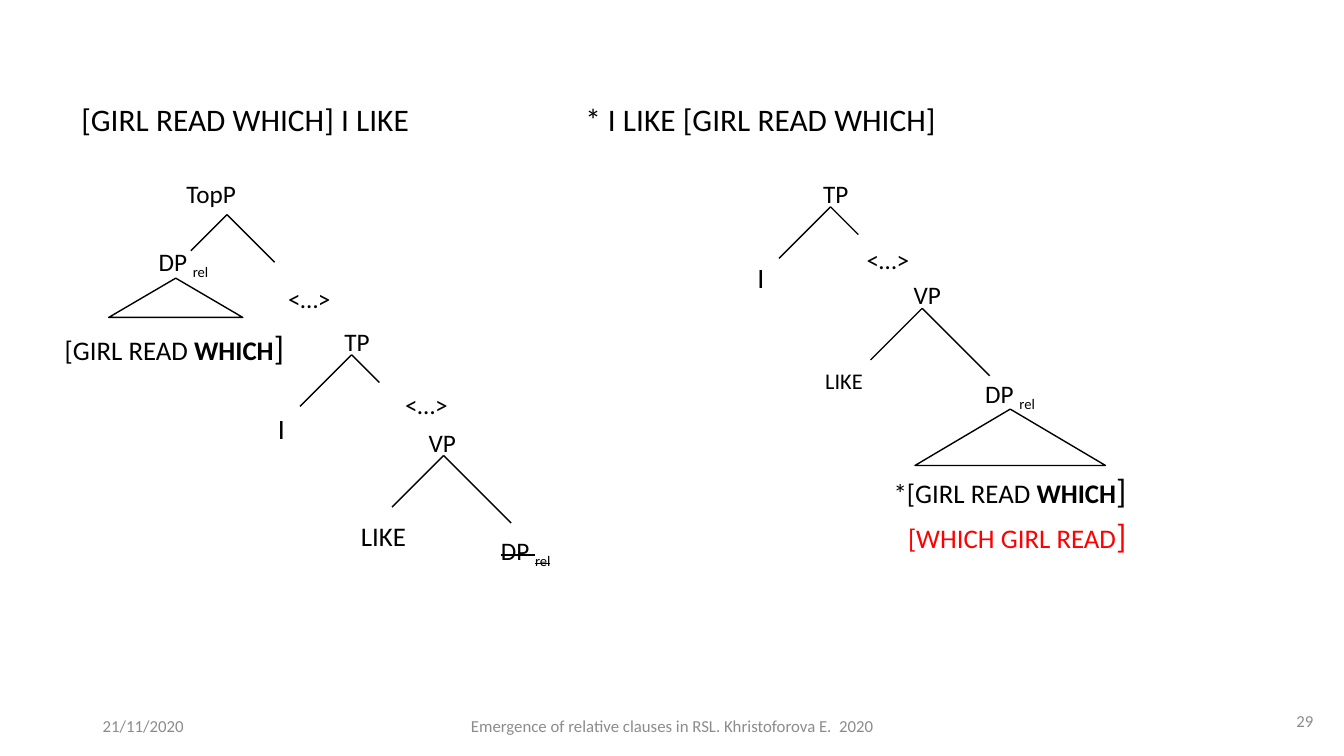
from dataclasses import dataclass

from lxml import etree
from pptx import Presentation
from pptx.dml.color import RGBColor
from pptx.enum import shapes, text
from pptx.oxml import ns
from pptx.util import Cm, Pt

LEFT, MID, RIGHT = text.PP_ALIGN.LEFT, text.PP_ALIGN.CENTER, text.PP_ALIGN.RIGHT


@dataclass(frozen=True)
class Theme:
    font: str = "Calibri"
    ink: RGBColor = RGBColor(0, 0, 0)
    paper: RGBColor = RGBColor(255, 255, 255)
    red: RGBColor = RGBColor(255, 0, 0)
    grey: RGBColor = RGBColor(0x8C, 0x8C, 0x8C)
    line: float = 1
    foot: int = 12
    node: int = 18
    word: int = 20
    phrase: int = 24
    head: int = 28


T = Theme()


@dataclass(frozen=True)
class Bit:
    text: str
    small: bool = False
    bold: bool = False
    sub: bool = False
    strike: bool = False


@dataclass(frozen=True)
class Label:
    x: float
    y: float
    w: float
    bits: tuple[Bit, ...]
    size: int = T.node
    color: RGBColor = T.ink
    align: text.PP_ALIGN = MID


@dataclass(frozen=True)
class Fork:
    x: float
    y: float
    left: float
    right: float


@dataclass(frozen=True)
class Roof:
    x: float
    y: float
    w: float
    h: float


def plain(word: str) -> tuple[Bit, ...]:
    return (Bit(word),)


def caps(word: str) -> tuple[Bit, ...]:
    return (Bit(word, small=True),)


def rel(strike: bool = False) -> tuple[Bit, ...]:
    return Bit("DP ", strike=strike), Bit("rel", sub=True, strike=strike)


def clause(start: str) -> tuple[Bit, ...]:
    return Bit(start, small=True), Bit("which", small=True, bold=True), Bit("]")


HEAD = Label(1.8, 2.34, 30.86, caps("[girl read which] i like\t* i like [girl read which]"),
             T.head, align=LEFT)
FORKS = [
    Fork(5.72, 5.41, 0.91, 1.2),
    Fork(8.86, 8.94, 1.3, 0.7),
    Fork(11.18, 11.48, 1.3, 1.7),
    Fork(20.93, 5.21, 1.3, 0.7),
    Fork(23.24, 7.77, 1.3, 1.7),
]
ROOFS = [Roof(2.74, 7.01, 3.38, 0.99), Roof(23.06, 10.31, 4.8, 1.42)]
LABELS = [
    Label(4.19, 4.37, 2.26, plain("TopP")),
    Label(3.38, 6.12, 2.49, rel()),
    Label(1.04, 8.1, 6.71, clause("[girl read "), T.phrase),
    Label(7.01, 7.01, 2.26, plain("<…>"), align=LEFT),
    Label(8.26, 8.08, 1.47, plain("TP")),
    Label(6.27, 10.24, 1.47, caps("I"), T.word),
    Label(9.96, 9.68, 2.26, plain("<…>"), align=LEFT),
    Label(10.41, 10.64, 1.47, plain("VP")),
    Label(8.79, 12.8, 1.75, caps("like"), T.phrase),
    Label(12.07, 13.41, 2.36, rel(strike=True)),
    Label(20.35, 4.37, 1.42, plain("TP")),
    Label(18.06, 6.43, 2.06, caps("I"), T.word),
    Label(21.59, 6.02, 2.26, plain("<…>"), align=LEFT),
    Label(22.66, 6.91, 1.42, plain("VP")),
    Label(20.24, 8.97, 2.06, caps("like"), T.word),
    Label(24.31, 9.45, 2.29, rel()),
    Label(22.1, 11.71, 6.71, clause("*[girl read "), T.phrase),
    Label(22.28, 12.85, 6.71, caps("[which girl read") + plain("]"), T.phrase, T.red),
    Label(2.34, 17.78, 7.62, plain("21/11/2020"), T.foot, T.grey, LEFT),
    Label(11.23, 17.78, 11.43,
          plain("Emergence of relative clauses in RSL. Khristoforova E.  2020"), T.foot, T.grey),
    Label(25.73, 17.65, 7.62, plain("29"), T.foot, T.grey, RIGHT),
]


def write(slide, label: Label):
    high = 0.25 + 0.043 * max(label.size, T.node)
    box = slide.shapes.add_textbox(Cm(label.x), Cm(label.y), Cm(label.w), Cm(high))
    frame = box.text_frame
    frame.word_wrap = True
    frame.vertical_anchor = text.MSO_ANCHOR.MIDDLE
    para = frame.paragraphs[0]
    para.alignment = label.align
    para.font.name = T.font
    para.font.size = Pt(label.size)
    para.font.color.rgb = label.color
    for bit in label.bits:
        run = para.add_run()
        run.text = bit.text
        props = run._r.get_or_add_rPr()
        if bit.bold:
            run.font.bold = True
        if bit.small:
            props.set("cap", "small")
        if bit.strike:
            props.set("strike", "sngStrike")
        if bit.sub:
            props.set("baseline", "-25000")
    return box


def title(slide, label: Label) -> None:
    box = write(slide, label)
    box.height = Cm(1.88)
    box.text_frame.vertical_anchor = text.MSO_ANCHOR.TOP
    para = box.text_frame.paragraphs[0]
    para.line_spacing = 0.9
    para.space_before = Pt(10)
    tabs = etree.Element(ns.qn("a:tabLst"))
    etree.SubElement(tabs, ns.qn("a:tab"), pos=str(Cm(12.7)), algn="l")
    para._p.pPr.find(ns.qn("a:defRPr")).addprevious(tabs)


def branch(slide, fork: Fork) -> None:
    for dx, dy in ((-fork.left, fork.left), (fork.right, fork.right)):
        leg = slide.shapes.add_connector(
            shapes.MSO_CONNECTOR.STRAIGHT, Cm(fork.x), Cm(fork.y), Cm(fork.x + dx), Cm(fork.y + dy))
        leg.line.color.rgb = T.ink
        leg.line.width = Pt(T.line)
        etree.SubElement(leg._element.spPr, ns.qn("a:effectLst"))


def cover(slide, roof: Roof) -> None:
    shape = slide.shapes.add_shape(
        shapes.MSO_SHAPE.ISOSCELES_TRIANGLE, Cm(roof.x), Cm(roof.y), Cm(roof.w), Cm(roof.h))
    shape.shadow.inherit = False
    shape.fill.solid()
    shape.fill.fore_color.rgb = T.paper
    shape.line.color.rgb = T.ink
    shape.line.width = Pt(T.line)


def main() -> None:
    """Build the slide with the two syntax trees."""
    deck = Presentation()
    deck.slide_width, deck.slide_height = Cm(33.87), Cm(19.05)
    slide = deck.slides.add_slide(deck.slide_layouts[6])
    title(slide, HEAD)
    for fork in FORKS:
        branch(slide, fork)
    for roof in ROOFS:
        cover(slide, roof)
    for label in LABELS:
        write(slide, label)
    deck.save("out.pptx")


if __name__ == "__main__":
    main()
